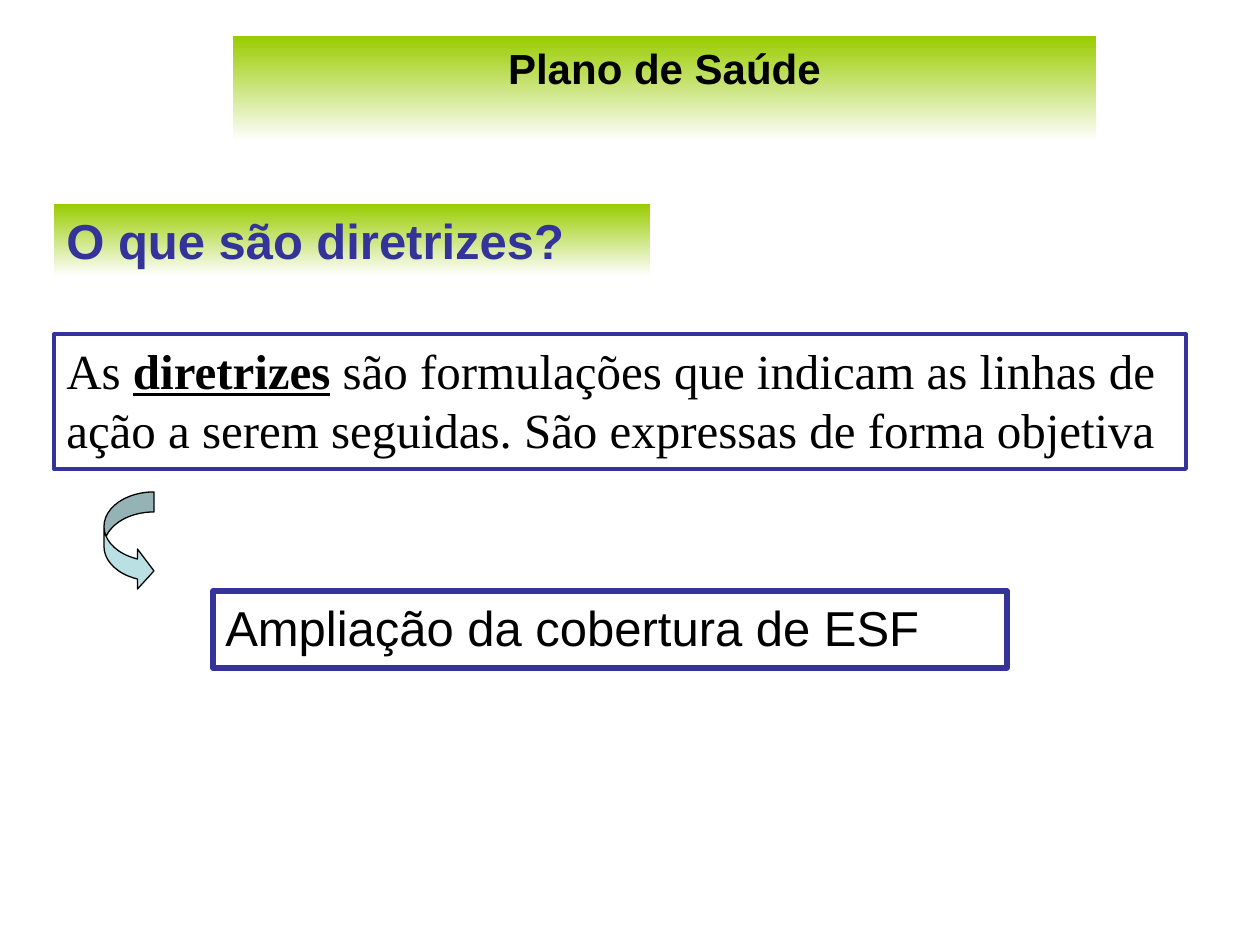
from pptx import Presentation
from pptx.dml.color import RGBColor
from pptx.enum.shapes import MSO_SHAPE
from pptx.enum.text import MSO_ANCHOR, MSO_AUTO_SIZE, PP_ALIGN
from pptx.util import Pt

PX = 914400 / 126
BLACK = RGBColor(0x00, 0x00, 0x00)
WHITE = RGBColor(0xFF, 0xFF, 0xFF)
BLUE = RGBColor(0x33, 0x33, 0x99)
GREEN = RGBColor(0x99, 0xCC, 0x00)
AQUA = RGBColor(0xBB, 0xE0, 0xE3)

HEAD = dict(name="Arial", size=Pt(24), bold=True)
ASK = dict(name="Arial", size=Pt(28), bold=True)
SERIF = dict(name="Times New Roman", size=Pt(28))
PLAIN = dict(name="Arial", size=Pt(28))
KEY = dict(SERIF, bold=True, underline=True)


def emu(px):
    return round(px * PX)


def place(shape, box):
    shape.left, shape.top, shape.width, shape.height = map(emu, box)


def write(shape, runs, color, align=PP_ALIGN.LEFT):
    frame = shape.text_frame
    form = dict(word_wrap=True, auto_size=MSO_AUTO_SIZE.SHAPE_TO_FIT_TEXT,
                vertical_anchor=MSO_ANCHOR.TOP)
    for key, value in form.items():
        setattr(frame, key, value)
    para = frame.paragraphs[0]
    para.alignment = align
    para.space_before = Pt(0)
    for text, style in runs:
        run = para.add_run()
        run.text = text
        for key, value in style.items():
            setattr(run.font, key, value)
        run.font.color.rgb = color


def fade(shape):
    """Green at the top, white at the bottom."""
    shape.fill.gradient()
    shape.fill.gradient_angle = 270
    for stop, color, at in zip(shape.fill.gradient_stops, (GREEN, WHITE), (0, 1)):
        stop.color.rgb = color
        stop.position = at


def add_title(slide, box, text):
    title = slide.shapes.title
    place(title, box)
    fade(title)
    write(title, [(text, HEAD)], BLACK, PP_ALIGN.CENTER)


def add_band(slide, box, text):
    band = slide.shapes.add_textbox(*map(emu, box))
    fade(band)
    write(band, [(text, ASK)], BLUE)


def add_frame(slide, box, runs, width):
    frame = slide.shapes.add_textbox(*map(emu, box))
    frame.line.color.rgb = BLUE
    frame.line.width = Pt(width)
    write(frame, runs, BLACK)


def add_arrow(slide, box):
    arrow = slide.shapes.add_shape(MSO_SHAPE.CURVED_RIGHT_ARROW, *map(emu, box))
    arrow.shadow.inherit = False
    for i, value in enumerate((0.4, 0.8, 0.33)):
        arrow.adjustments[i] = value
    arrow.fill.solid()
    arrow.fill.fore_color.rgb = AQUA
    arrow.line.color.rgb = BLACK
    arrow.line.width = Pt(0.75)


def main():
    deck = Presentation()
    deck.slide_width, deck.slide_height = emu(1260), emu(945)
    slide = deck.slides.add_slide(deck.slide_layouts[5])

    # Title and question
    add_title(slide, (233, 36, 863, 63), "Plano de Saúde")
    add_band(slide, (54, 204, 596, 72), "O que são diretrizes?")

    # Definition, leading to an example
    add_frame(slide, (54, 334, 1132, 135), [
        ("As ", SERIF),
        ("diretrizes", KEY),
        (" são formulações que indicam as linhas de ação a serem seguidas. "
         "São expressas de forma objetiva", SERIF),
    ], 2.25)
    add_arrow(slide, (104, 492, 50, 99))
    add_frame(slide, (213, 591, 794, 77),
              [("Ampliação da cobertura de ESF", PLAIN)], 3)

    deck.save("out.pptx")


if __name__ == "__main__":
    main()
